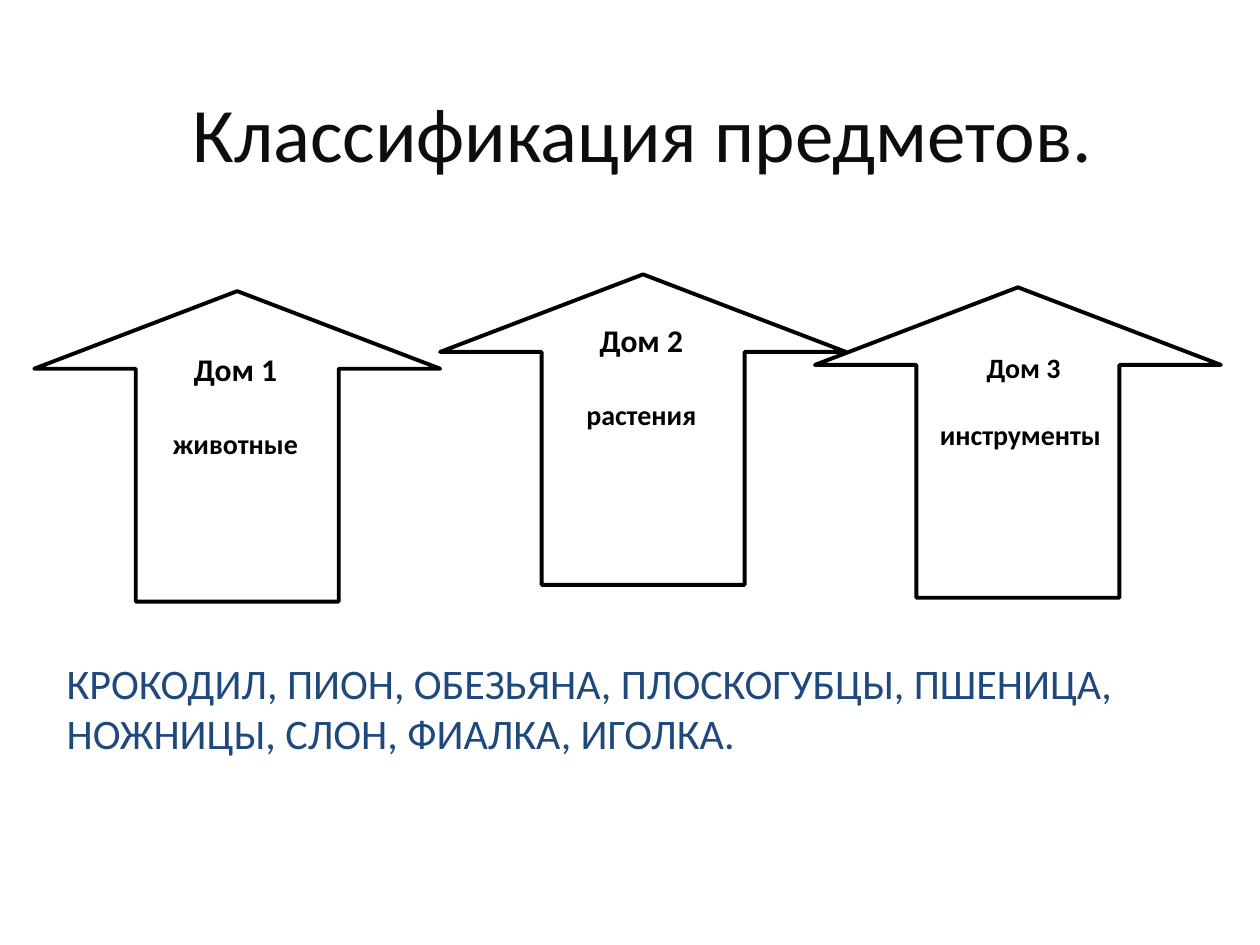
"""Build a slide that sorts words into three houses: animals, plants and tools."""
from pptx import Presentation
from pptx.dml.color import RGBColor
from pptx.enum.shapes import MSO_SHAPE
from pptx.enum.text import MSO_ANCHOR, PP_ALIGN
from pptx.util import Pt

BLACK = RGBColor(0x00, 0x00, 0x00)
WHITE = RGBColor(0xFF, 0xFF, 0xFF)
TITLE_COLOR = RGBColor(0x0D, 0x0D, 0x0D)
BLUE = RGBColor(0x1F, 0x49, 0x7D)
FONT = "Calibri"


def add_white_shape(kind, left, top, width, height):
    shape = page.shapes.add_shape(kind, Pt(left), Pt(top), Pt(width), Pt(height))
    shape.shadow.inherit = False
    shape.fill.solid()
    shape.fill.fore_color.rgb = WHITE
    return shape


def write(paragraph, text, size, color, align, bold=False):
    paragraph.text = text
    paragraph.alignment = align
    paragraph.font.name = FONT
    paragraph.font.size = Pt(size)
    paragraph.font.bold = bold
    paragraph.font.color.rgb = color


presentation = Presentation()
presentation.slide_width = Pt(720)
presentation.slide_height = Pt(540)
page = presentation.slides.add_slide(presentation.slide_layouts[5])

title = page.shapes.title
title.left, title.top, title.width, title.height = Pt(54), Pt(12), Pt(626.4), Pt(126)
title.text_frame.vertical_anchor = MSO_ANCHOR.MIDDLE
write(title.text_frame.paragraphs[0], "Классификация предметов.", 44, TITLE_COLOR, PP_ALIGN.CENTER)

for left, top in [(251.5, 156.8), (19.6, 166.4), (465.7, 164.2)]:
    house = add_white_shape(MSO_SHAPE.UP_ARROW, left, top, 232, 177.4)
    house.adjustments[0] = 0.5
    house.adjustments[1] = 0.25
    house.line.color.rgb = BLACK
    house.line.width = Pt(2.25)

labels = [
    ("Дом 1", "животные", 91.4, 196.6, 89.3, 18, PP_ALIGN.CENTER),
    ("Дом 2", "растения", 323.3, 180, 89.3, 18, PP_ALIGN.CENTER),
    ("Дом 3", "инструменты", 537.1, 196.6, 98.6, 16, PP_ALIGN.LEFT),
]
for name, category, left, top, width, name_size, category_align in labels:
    label = add_white_shape(MSO_SHAPE.RECTANGLE, left, top, width, 113)
    label.line.fill.background()
    frame = label.text_frame
    frame.word_wrap = True
    frame.vertical_anchor = MSO_ANCHOR.TOP
    frame.margin_left, frame.margin_right = Pt(0), Pt(2.9)
    frame.margin_top = frame.margin_bottom = Pt(3.6)
    write(frame.paragraphs[0], name, name_size, BLACK, PP_ALIGN.CENTER, bold=True)
    category_paragraph = frame.add_paragraph()
    category_paragraph.space_before = Pt(round(name_size * 1.22, 1))
    write(category_paragraph, category, 16, BLACK, category_align, bold=True)

words = page.shapes.add_textbox(Pt(31), Pt(372.2), Pt(646.6), Pt(64.8))
words.text_frame.word_wrap = True
write(
    words.text_frame.paragraphs[0],
    "КРОКОДИЛ, ПИОН, ОБЕЗЬЯНА, ПЛОСКОГУБЦЫ, ПШЕНИЦА, НОЖНИЦЫ, СЛОН, ФИАЛКА, ИГОЛКА.",
    24, BLUE, PP_ALIGN.LEFT,
)

presentation.save("out.pptx")
